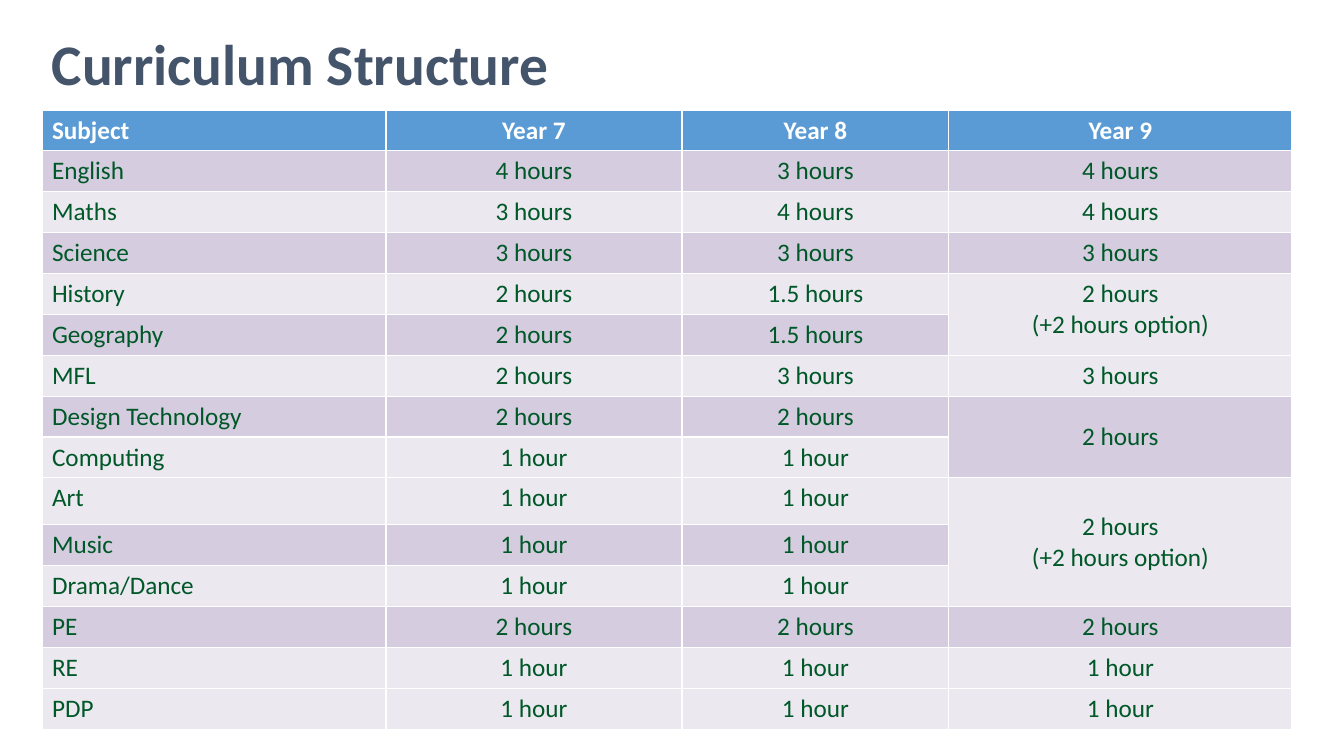
from pptx import Presentation
from pptx.dml.color import RGBColor
from pptx.enum import text
from pptx.util import Pt

EMU_PER_PX = 914400 / 100.8
WHITE = RGBColor(0xFF, 0xFF, 0xFF)
SLATE = RGBColor(0x44, 0x54, 0x6A)
BLUE = RGBColor(0x5B, 0x9B, 0xD5)
GREEN = RGBColor(0x00, 0x58, 0x28)
LILAC = RGBColor(0xD5, 0xCD, 0xDF)
PALE = RGBColor(0xEB, 0xE8, 0xF0)

COLUMN_WIDTHS = [344, 296, 267, 343]
ROW_HEIGHT = 40
ART_HEIGHT = 47
HEADINGS = ["Subject", "Year 7", "Year 8", "Year 9"]
OPTION = "2 hours\n(+2 hours option)"
SUBJECTS = [
    ["English", "4 hours", "3 hours", "4 hours"],
    ["Maths", "3 hours", "4 hours", "4 hours"],
    ["Science", "3 hours", "3 hours", "3 hours"],
    ["History", "2 hours", "1.5 hours", OPTION],
    ["Geography", "2 hours", "1.5 hours", ""],
    ["MFL", "2 hours", "3 hours", "3 hours"],
    ["Design Technology", "2 hours", "2 hours", "2 hours"],
    ["Computing", "1 hour", "1 hour", ""],
    ["Art", "1 hour", "1 hour", OPTION],
    ["Music", "1 hour", "1 hour", ""],
    ["Drama/Dance", "1 hour", "1 hour", ""],
    ["PE", "2 hours", "2 hours", "2 hours"],
    ["RE", "1 hour", "1 hour", "1 hour"],
    ["PDP", "1 hour", "1 hour", "1 hour"],
]
SHADED = {"English", "Science", "Geography", "Design Technology", "Music", "PE"}
YEAR_9_SPANS = [
    (4, 5, text.MSO_ANCHOR.TOP),
    (7, 8, text.MSO_ANCHOR.MIDDLE),
    (9, 11, text.MSO_ANCHOR.MIDDLE),
]


def px(length):
    """Turn pixels into EMU."""
    return round(length * EMU_PER_PX)


def style_font(para, size, color, bold):
    """Set the font of a whole paragraph."""
    font = para.font
    font.name, font.size, font.bold = "Calibri", Pt(size), bold
    font.color.rgb = color


def add_title(page, left, top, width, height):
    """Place the slide title, centred vertically in its box."""
    box = page.shapes.add_textbox(px(left), px(top), px(width), px(height))
    frame = box.text_frame
    frame.word_wrap = True
    frame.vertical_anchor = text.MSO_ANCHOR.MIDDLE
    frame.text = "Curriculum Structure"
    style_font(frame.paragraphs[0], 41, SLATE, True)


def fill_cell(cell, wording, column, fill, color, bold):
    """Write and colour one table cell."""
    cell.fill.solid()
    cell.fill.fore_color.rgb = fill
    cell.text = wording
    for para in cell.text_frame.paragraphs:
        para.alignment = text.PP_ALIGN.CENTER if column else text.PP_ALIGN.LEFT
        style_font(para, 18, color, bold)


def add_timetable(page, left, top):
    """Place the table of weekly hours by subject and year."""
    rows = [HEADINGS] + SUBJECTS
    heights = [ART_HEIGHT if row[0] == "Art" else ROW_HEIGHT for row in rows]
    frame = page.shapes.add_table(
        len(rows), len(HEADINGS), px(left), px(top),
        px(sum(COLUMN_WIDTHS)), px(sum(heights)))
    table = frame.table
    for column, width in zip(table.columns, COLUMN_WIDTHS):
        column.width = px(width)
    for index, row in enumerate(rows):
        table.rows[index].height = px(heights[index])
        header = index == 0
        body_fill = LILAC if row[0] in SHADED else PALE
        for column, wording in enumerate(row):
            fill_cell(table.cell(index, column), wording, column,
                      BLUE if header else body_fill,
                      WHITE if header else GREEN, header)
    year_9 = len(HEADINGS) - 1
    for first, last, anchor in YEAR_9_SPANS:
        cell = table.cell(first, year_9)
        cell.merge(table.cell(last, year_9))
        cell.vertical_anchor = anchor


def main():
    """Build and save the deck."""
    deck = Presentation()
    deck.slide_width, deck.slide_height = px(1344), px(756)
    page = deck.slides.add_slide(deck.slide_layouts[6])
    add_timetable(page, 42, 110)
    add_title(page, 42, 0, 1210, 126)
    deck.save("out.pptx")


if __name__ == "__main__":
    main()
